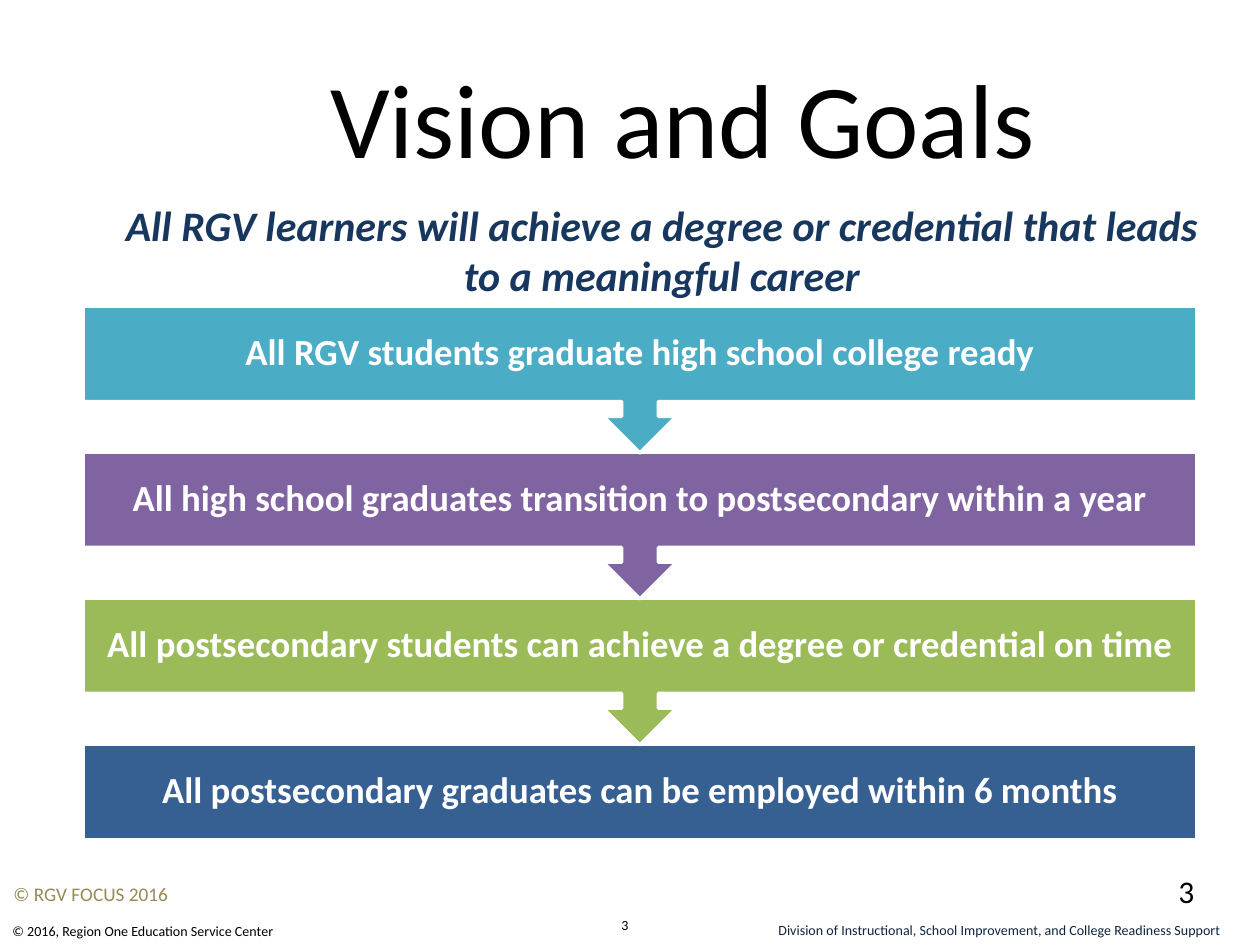
from pptx import Presentation
from pptx import util as u
from pptx.enum import shapes, text
from pptx.dml.color import RGBColor

EMU_PER_PX = 914400 / 126
FONT = "Calibri"
COLORS = {
    "black": "000000", "white": "FFFFFF", "navy": "17375E", "ink": "0F243E",
    "khaki": "948A54", "teal": "4BACC6", "purple": "8064A2",
    "green": "9BBB59", "blue": "376092",
}
GOALS = [
    ("All RGV students graduate high school college ready", "teal"),
    ("All high school graduates transition to postsecondary within a year", "purple"),
    ("All postsecondary students can achieve a degree or credential on time", "green"),
    ("All postsecondary graduates can be employed within 6 months", "blue"),
]
GOAL_LEFT, GOAL_TOP, GOAL_WIDTH = 83, 306, 1114
GOAL_PITCH, BAR_HEIGHT, CALLOUT_HEIGHT = 146, 96, 147


def px(length):
    return u.Emu(round(length * EMU_PER_PX))


def rgb(name):
    return RGBColor.from_string(COLORS[name])


def write(frame, words, size, color, align=text.PP_ALIGN.LEFT, bold=False, italic=False):
    paragraph = frame.paragraphs[0]
    paragraph.text = words
    paragraph.alignment = align
    font = paragraph.font
    font.name, font.size = FONT, u.Pt(size)
    font.bold, font.italic = bold, italic
    font.color.rgb = rgb(color)
    return paragraph


def add_label(slide, box, words, size, color, anchor=text.MSO_ANCHOR.TOP, **style):
    frame = slide.shapes.add_textbox(*map(px, box)).text_frame
    frame.word_wrap = True
    frame.vertical_anchor = anchor
    write(frame, words, size, color, **style)


def add_goal(slide, index):
    """Draw one goal bar; all but the last point down to the next goal."""
    words, color = GOALS[index]
    is_last = index == len(GOALS) - 1
    kind = shapes.MSO_SHAPE.RECTANGLE if is_last else shapes.MSO_SHAPE.DOWN_ARROW_CALLOUT
    height = BAR_HEIGHT if is_last else CALLOUT_HEIGHT
    box = (GOAL_LEFT, GOAL_TOP + index * GOAL_PITCH, GOAL_WIDTH, height)
    goal = slide.shapes.add_shape(kind, *map(px, box))
    goal.shadow.inherit = False
    goal.fill.solid()
    goal.fill.fore_color.rgb = rgb(color)
    goal.line.color.rgb = rgb("white")
    goal.line.width = u.Pt(2)
    frame = goal.text_frame
    frame.word_wrap = True
    frame.vertical_anchor = text.MSO_ANCHOR.MIDDLE
    frame.margin_left = frame.margin_right = px(20)
    frame.margin_top = frame.margin_bottom = px(20)
    paragraph = write(frame, words, 21, "white", text.PP_ALIGN.CENTER, bold=True)
    paragraph.line_spacing = 0.9


def main():
    deck = Presentation()
    deck.slide_width, deck.slide_height = px(1260), px(945)
    slide = deck.slides.add_slide(deck.slide_layouts[6])
    middle, center = text.MSO_ANCHOR.MIDDLE, text.PP_ALIGN.CENTER

    add_label(slide, (0, 916, 357, 30), "© 2016, Region One Education Service Center", 8, "black")
    add_label(slide, (766, 915, 525, 30),
              "Division of Instructional, School Improvement, and College Readiness Support",
              8, "ink")
    add_label(slide, (609, 910, 53, 30), "3", 8, "black")

    add_label(slide, (168, 38, 1029, 157), "Vision and Goals", 60, "black",
              anchor=middle, align=center)
    add_label(slide, (95, 193, 1134, 113),
              "All RGV learners will achieve a degree or credential that leads "
              "to a meaningful career",
              24, "navy", align=center, bold=True, italic=True)

    # Bottom goal first, so that each arrow tip lies over the bar below it.
    for index in reversed(range(len(GOALS))):
        add_goal(slide, index)

    add_label(slide, (1166, 866, 94, 48), "3", 18, "black")
    add_label(slide, (1, 869, 222, 50), "© RGV FOCUS 2016", 11, "khaki", anchor=middle)
    deck.save("out.pptx")


if __name__ == "__main__":
    main()
